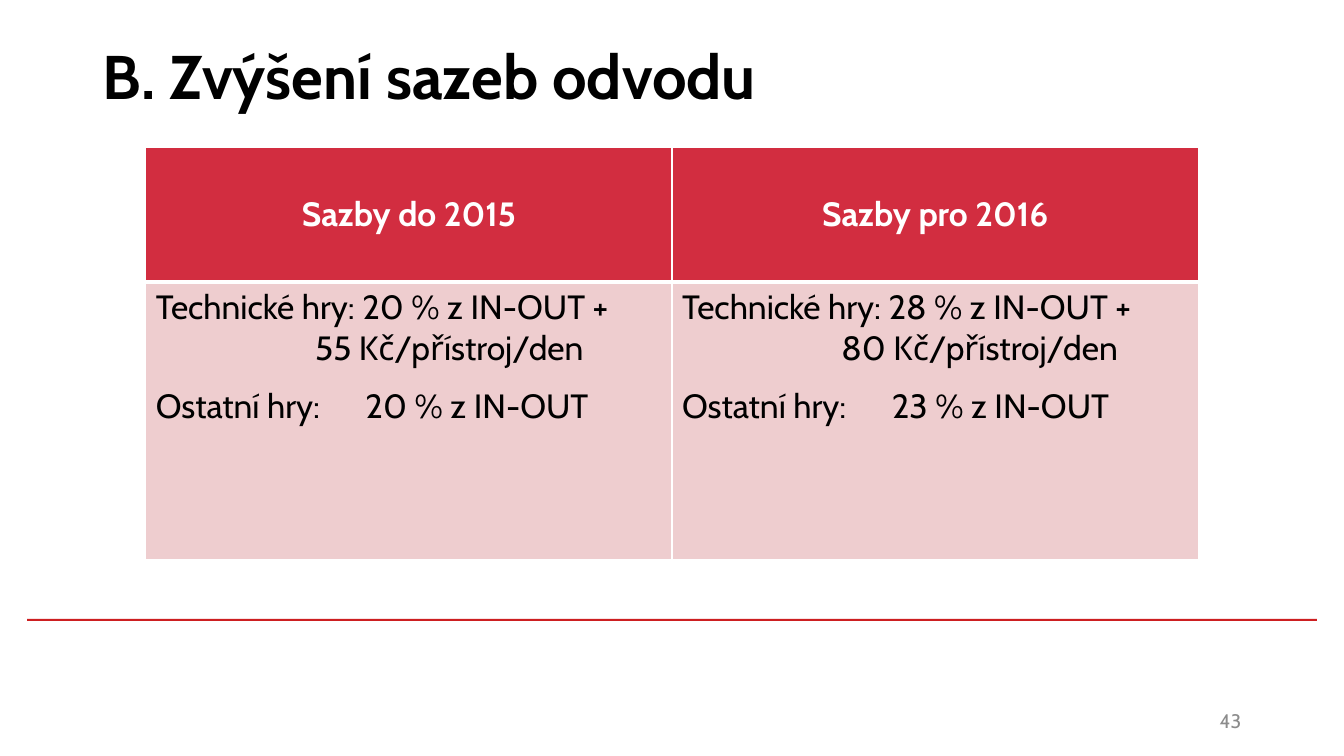
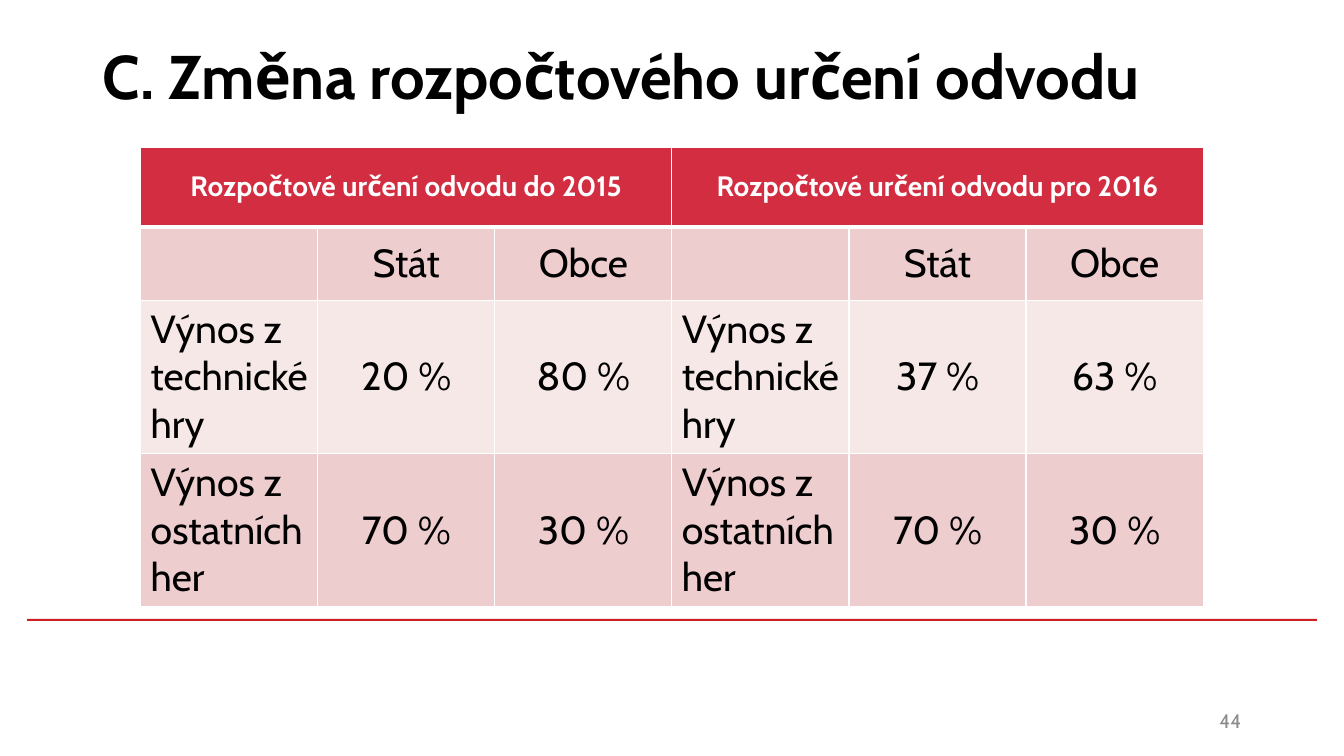
from dataclasses import dataclass

import lxml.etree
import pptx
import pptx.dml.color
import pptx.enum.shapes
import pptx.enum.text
import pptx.oxml.ns
import pptx.presentation
import pptx.slide
import pptx.table
import pptx.text.text
import pptx.util

Inches = pptx.util.Inches
Align = pptx.enum.text.PP_ALIGN
Anchor = pptx.enum.text.MSO_ANCHOR

FONT = "Cabin"
BLACK, WHITE, GRAY = "000000", "FFFFFF", "8C8C8C"
RULE_RED, HEADER_RED = "CD1F21", "D22D40"
BANDS = ("EECDCF", "F7E8E8")
SLIDE_WIDTH, SLIDE_HEIGHT = 13.33, 7.5
TABLE_TOP = 1.46
RATE_INDENT, RATE_TAB = 1.58, 2.08


@dataclass(frozen=True)
class TextStyle:
    size: int
    color: str = BLACK
    bold: bool = False


@dataclass(frozen=True)
class Rates:
    """Levy rates of one year."""
    heading: str
    technical: str
    machine_fee: str
    other: str


@dataclass(frozen=True)
class Shares:
    """Split of the levy in one year, as (state, municipalities)."""
    heading: str
    technical: tuple[str, str]
    other: tuple[str, str]


TITLE = TextStyle(44, bold=True)
NUMBER = TextStyle(14, GRAY)
RATE_HEADER, RATE_BODY = TextStyle(24, WHITE, True), TextStyle(24)
SHARE_HEADER, SHARE_BODY = TextStyle(20, WHITE, True), TextStyle(28)

RATES = (
    Rates("Sazby do 2015", "20 % z IN-OUT +", "55 Kč/přístroj/den", "20 % z IN-OUT"),
    Rates("Sazby pro 2016", "28 % z IN-OUT +", "80 Kč/přístroj/den", "23 % z IN-OUT"),
)
SHARES = (
    Shares("Rozpočtové určení odvodu do 2015", ("20 %", "80 %"), ("70 %", "30 %")),
    Shares("Rozpočtové určení odvodu pro 2016", ("37 %", "63 %"), ("70 %", "30 %")),
)


def rgb(color: str) -> pptx.dml.color.RGBColor:
    return pptx.dml.color.RGBColor.from_string(color)


def add_run(paragraph: pptx.text.text._Paragraph, text: str, style: TextStyle) -> None:
    run = paragraph.add_run()
    run.text = text
    run.font.name = FONT
    run.font.size = pptx.util.Pt(style.size)
    run.font.bold = style.bold
    run.font.color.rgb = rgb(style.color)


def add_rule(slide: pptx.slide.Slide) -> None:
    rule = slide.shapes.add_shape(
        pptx.enum.shapes.MSO_SHAPE.RECTANGLE,
        Inches(0.27), Inches(6.14), Inches(12.79), Inches(0.02))
    rule.shadow.inherit = False
    rule.fill.solid()
    rule.fill.fore_color.rgb = rgb(RULE_RED)
    rule.line.fill.background()


def add_title(slide: pptx.slide.Slide, text: str) -> None:
    title = slide.shapes.title
    title.left, title.top = Inches(0.92), Inches(0.02)
    title.width, title.height = Inches(11.5), Inches(1.45)
    title.text_frame.vertical_anchor = Anchor.MIDDLE
    paragraph = title.text_frame.paragraphs[0]
    paragraph.alignment = Align.LEFT
    add_run(paragraph, text, TITLE)


def add_number(slide: pptx.slide.Slide, number: int) -> None:
    box = slide.shapes.add_textbox(Inches(9.41), Inches(6.95), Inches(3), Inches(0.4))
    box.text_frame.word_wrap = True
    box.text_frame.vertical_anchor = Anchor.MIDDLE
    paragraph = box.text_frame.paragraphs[0]
    paragraph.alignment = Align.RIGHT
    add_run(paragraph, str(number), NUMBER)


def add_slide(presentation: pptx.presentation.Presentation, title: str,
              number: int) -> pptx.slide.Slide:
    slide = presentation.slides.add_slide(presentation.slide_layouts[5])
    add_rule(slide)
    add_title(slide, title)
    add_number(slide, number)
    return slide


def set_borders(cell: pptx.table._Cell, top: int, bottom: int) -> None:
    """Give a cell white borders, 1 pt at the sides."""
    properties = cell._tc.get_or_add_tcPr()
    widths = {"a:lnL": 1, "a:lnR": 1, "a:lnT": top, "a:lnB": bottom}
    for index, (tag, points) in enumerate(widths.items()):
        line = lxml.etree.Element(pptx.oxml.ns.qn(tag), w=str(pptx.util.Pt(points)))
        fill = lxml.etree.SubElement(line, pptx.oxml.ns.qn("a:solidFill"))
        lxml.etree.SubElement(fill, pptx.oxml.ns.qn("a:srgbClr"), val=WHITE)
        properties.insert(index, line)


def add_table(slide: pptx.slide.Slide, columns: int, width: float,
              row_heights: tuple[float, ...]) -> pptx.table.Table:
    """Add a centred table with a red header and banded rows."""
    frame = slide.shapes.add_table(
        len(row_heights), columns, Inches((SLIDE_WIDTH - width) / 2),
        Inches(TABLE_TOP), Inches(width), Inches(sum(row_heights)))
    table = frame.table
    for column in table.columns:
        column.width = Inches(width / columns)
    for index, height in enumerate(row_heights):
        table.rows[index].height = Inches(height)
        color = BANDS[(index - 1) % 2] if index else HEADER_RED
        for cell in table.rows[index].cells:
            cell.fill.solid()
            cell.fill.fore_color.rgb = rgb(color)
            set_borders(cell, 3 if index == 1 else 1, 1 if index else 3)
    return table


def write_cell(cell: pptx.table._Cell, text: str, style: TextStyle,
               alignment: Align = Align.CENTER) -> None:
    cell.vertical_anchor = Anchor.MIDDLE
    paragraph = cell.text_frame.paragraphs[0]
    paragraph.alignment = alignment
    add_run(paragraph, text, style)


def write_rates(cell: pptx.table._Cell, rates: Rates) -> None:
    technical = cell.text_frame.paragraphs[0]
    properties = technical._p.get_or_add_pPr()
    properties.set("marL", str(Inches(RATE_INDENT)))
    properties.set("indent", str(Inches(-RATE_INDENT)))
    technical.space_after = pptx.util.Pt(12)
    add_run(technical, f"Technické hry: {rates.technical}", RATE_BODY)
    technical.add_line_break()
    add_run(technical, rates.machine_fee, RATE_BODY)

    other = cell.text_frame.add_paragraph()
    tabs = lxml.etree.SubElement(other._p.get_or_add_pPr(), pptx.oxml.ns.qn("a:tabLst"))
    lxml.etree.SubElement(tabs, pptx.oxml.ns.qn("a:tab"),
                          pos=str(Inches(RATE_TAB)), algn="l")
    add_run(other, f"Ostatní hry:\t{rates.other}", RATE_BODY)


def fill_rates_slide(slide: pptx.slide.Slide) -> None:
    table = add_table(slide, len(RATES), 10.44, (1.34, 2.75))
    for column, rates in enumerate(RATES):
        write_cell(table.cell(0, column), rates.heading, RATE_HEADER)
        write_rates(table.cell(1, column), rates)


def fill_shares_slide(slide: pptx.slide.Slide) -> None:
    table = add_table(slide, 3 * len(SHARES), 10.54, (0.79, 0.73, 1.52, 1.52))
    for year, shares in enumerate(SHARES):
        first = 3 * year
        table.cell(0, first).merge(table.cell(0, first + 2))
        write_cell(table.cell(0, first), shares.heading, SHARE_HEADER)
        rows = (
            ("", ("Stát", "Obce")),
            ("Výnos z technické hry", shares.technical),
            ("Výnos z ostatních her", shares.other),
        )
        for row, (label, values) in enumerate(rows, start=1):
            if label:
                write_cell(table.cell(row, first), label, SHARE_BODY, Align.LEFT)
            for column, value in enumerate(values, start=first + 1):
                write_cell(table.cell(row, column), value, SHARE_BODY)


def main() -> None:
    presentation = pptx.Presentation()
    presentation.slide_width = Inches(SLIDE_WIDTH)
    presentation.slide_height = Inches(SLIDE_HEIGHT)
    fill_rates_slide(add_slide(presentation, "B. Zvýšení sazeb odvodu", 43))
    fill_shares_slide(
        add_slide(presentation, "C. Změna rozpočtového určení odvodu", 44))
    presentation.save("out.pptx")


if __name__ == "__main__":
    main()
